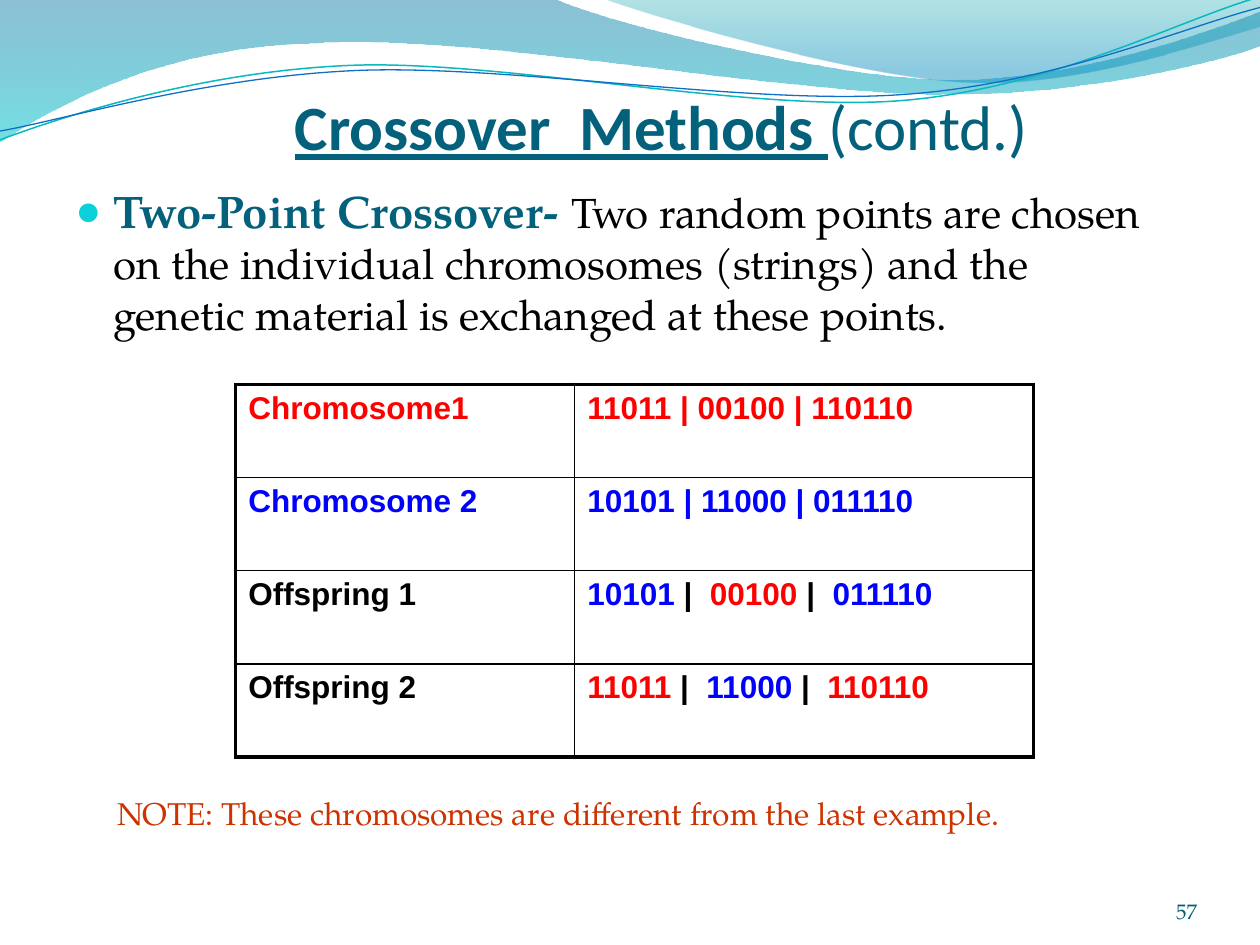
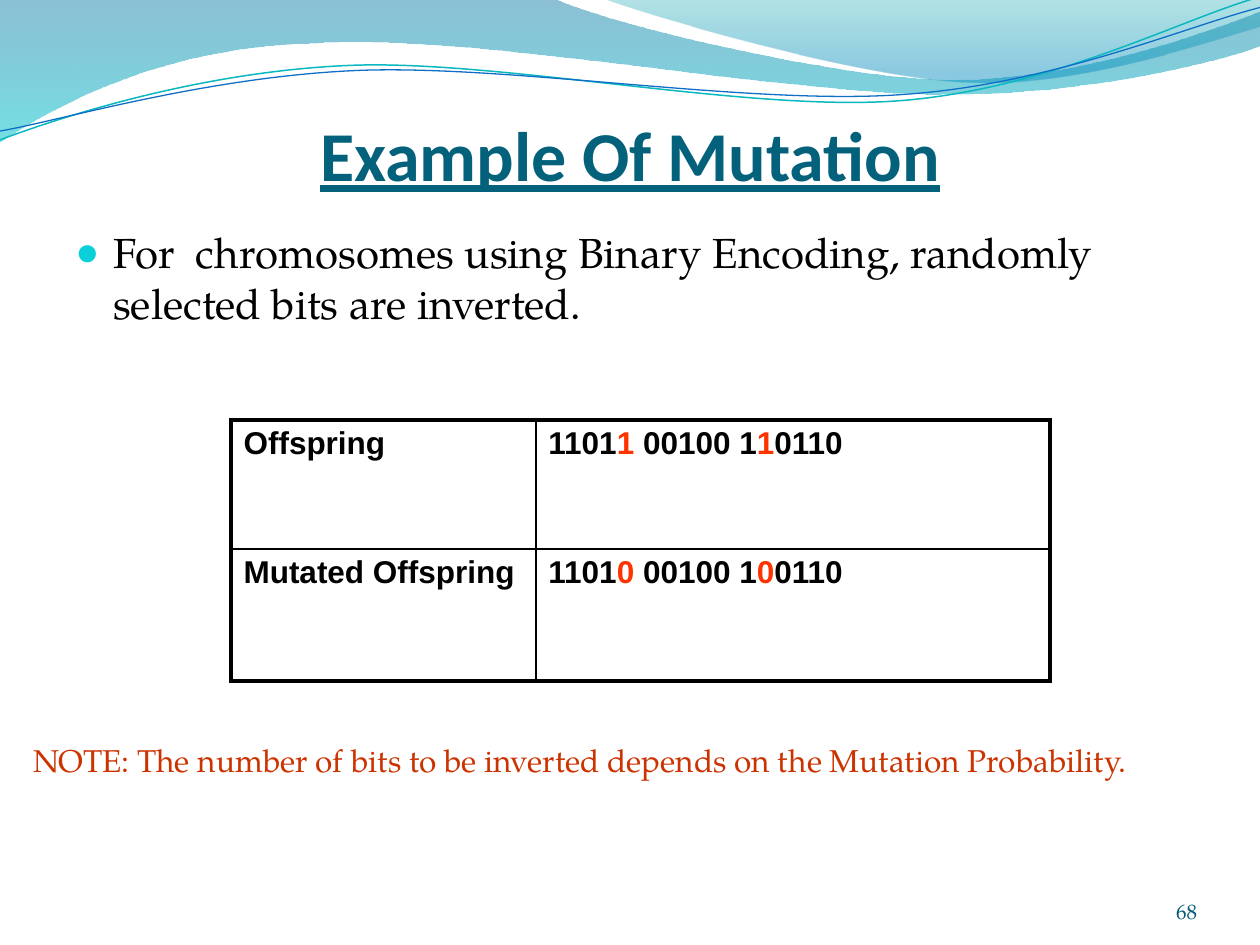
import math

import pptx
import pptx.dml.color
import pptx.enum.text
import pptx.oxml
import pptx.oxml.ns
import pptx.util

Pt = pptx.util.Pt
ALIGN = pptx.enum.text.PP_ALIGN
ANCHOR = pptx.enum.text.MSO_ANCHOR

COLORS = {
    "title": "04617B",
    "number": "045D75",
    "text": "000000",
    "bullet": "0BD0D9",
    "note": "CC3300",
    "red": "FF0000",
    "blue": "0000FF",
    "flipped": "FF3300",
    "teal_line": "0AB8BF",
    "blue_line": "0F6FC6",
    "band_top": "0074A1",
    "band_bottom": "00C6CF",
    "crest_top": "00A1A9",
    "crest_bottom": "008BBF",
}
SERIF, TITLE_FONT, TABLE_FONT = "TeX Gyre Pagella", "Calibri", "Arial"
WAVE_TILT = 357.3

BAND = [
    (0, 0), (316.8, -0.7),
    (342.7, 12.2, 478.1, 45.4, 545.8, 45.4),
    (614.2, 45.4, 689.8, 18.7, 720, 6.5),
    (720.7, 25.9),
    (707.8, 31.7, 626.4, 54.7, 537.1, 54),
    (447.8, 54, 275, 20.2, 185, 24.5),
    (92.9, 25.9, 33.1, 59.8, -0.7, 81.4),
    (0, 0),
]
CREST = [
    (344.9, -0.7),
    (366.5, 7.9, 491, 44.6, 553.7, 46.8),
    (616.3, 49.7, 691.9, 23, 720, 15.1),
    (720, 0), (344.9, -0.7),
]
TEAL_WAVE = [
    (0, 79.9),
    (34.6, 67, 113.8, 41, 199.4, 37.4),
    (284.4, 33.8, 427, 64.1, 513.4, 57.6),
    (599.8, 51.1, 675.4, 10.8, 718.6, -1.4),
]
BLUE_WAVE = [
    (0, 74.9),
    (33.8, 69.1, 118.1, 43.9, 203.8, 40.3),
    (290.2, 36.7, 429.8, 60.5, 516.2, 54),
    (601.9, 48.2, 677.5, 15.1, 720, 4.3),
]


def rgb(name):
    return pptx.dml.color.RGBColor.from_string(COLORS[name])


def new_xml(tag, **attributes):
    element = pptx.oxml.parse_xml(f"<a:{tag} {pptx.oxml.ns.nsdecls('a')}/>")
    for key, value in attributes.items():
        element.set(key, str(value))
    return element


def add_xml(parent, tag, **attributes):
    child = new_xml(tag, **attributes)
    parent.append(child)
    return child


def add_run(paragraph, text, font=SERIF, size=24, color="text", bold=False, underline=False):
    run = paragraph.add_run()
    run.text = text
    run.font.name = font
    run.font.size = Pt(size)
    run.font.color.rgb = rgb(color)
    run.font.bold = bold
    run.font.underline = underline


def turn(step, center, degrees):
    cos, sin = math.cos(math.radians(degrees)), math.sin(math.radians(degrees))
    offsets = [(x - center[0], y - center[1]) for x, y in zip(step[::2], step[1::2])]
    return sum(((center[0] + x * cos - y * sin, center[1] + x * sin + y * cos)
                for x, y in offsets), ())


class Deck:
    def __init__(self):
        self.presentation = pptx.Presentation()
        self.presentation.slide_width = Pt(720)
        self.presentation.slide_height = Pt(540)
        self.slide = None

    def start_slide(self, number):
        self.slide = self.presentation.slides.add_slide(self.presentation.slide_layouts[6])
        self.gradient_wave(BAND, (0, "band_top", 45), (100, "band_bottom", 55))
        self.gradient_wave(CREST, (0, "crest_top", 30), (80, "crest_bottom", 45))
        self.line_wave(TEAL_WAVE, (359.3, 41.4), "teal_line", 0.85)
        self.line_wave(BLUE_WAVE, (359.6, 42.5), "blue_line", 0.75)
        self.text((516, 492, 168, 36), [(number, {"size": 12, "color": "number"})],
                  align=ALIGN.RIGHT, anchor=ANCHOR.BOTTOM, insets=(0, 0, 0, 0))

    def outline(self, steps, close):
        points = [(Pt(x), Pt(y)) for step in steps for x, y in zip(step[::2], step[1::2])]
        builder = self.slide.shapes.build_freeform(*points[0])
        builder.add_line_segments(points[1:], close=close)
        wave = builder.convert_to_shape()
        wave.shadow.inherit = False
        segments = iter(list(wave.element.iter(pptx.oxml.ns.qn("a:lnTo"))))
        for step in steps[1:]:
            segment = next(segments)
            if len(step) == 6:
                curve = new_xml("cubicBezTo")
                segment.addprevious(curve)
                for part in (segment, next(segments), next(segments)):
                    curve.append(part[0])
                    part.getparent().remove(part)
        return wave

    def gradient_wave(self, steps, *stops):
        wave = self.outline(steps, close=True)
        wave.line.fill.background()
        wave.fill.gradient()
        wave.fill.gradient_angle = 270
        for stop, (position, color, _) in zip(wave.fill.gradient_stops, stops):
            stop.position = position / 100
            stop.color.rgb = rgb(color)
        tints = wave.element.spPr.iter(pptx.oxml.ns.qn("a:srgbClr"))
        for tint, (_, _, opacity) in zip(list(tints), stops):
            add_xml(tint, "alpha", val=opacity * 1000)

    def line_wave(self, steps, center, color, width):
        wave = self.outline([turn(step, center, -WAVE_TILT) for step in steps], close=False)
        wave.rotation = WAVE_TILT
        wave.fill.background()
        wave.line.color.rgb = rgb(color)
        wave.line.width = Pt(width)

    def text(self, box, runs, align=ALIGN.LEFT, anchor=ANCHOR.TOP,
             insets=(7.2, 3.6, 7.2, 3.6), space_before=0):
        frame = self.slide.shapes.add_textbox(*map(Pt, box)).text_frame
        frame.word_wrap = True
        frame.vertical_anchor = anchor
        (frame.margin_left, frame.margin_top,
         frame.margin_right, frame.margin_bottom) = map(Pt, insets)
        paragraph = frame.paragraphs[0]
        paragraph.alignment = align
        paragraph.space_before = Pt(space_before)
        for text, style in runs:
            add_run(paragraph, text, **style)
        return paragraph

    def title(self, box, size, heading, suffix=""):
        look = {"font": TITLE_FONT, "size": size, "color": "title"}
        runs = [(heading, {**look, "bold": True, "underline": True})]
        if suffix:
            runs.append((suffix, look))
        self.text(box, runs, align=ALIGN.CENTER, anchor=ANCHOR.BOTTOM, insets=(0, 3.6, 0, 0))

    def bullet(self, box, runs):
        properties = self.text(box, runs, space_before=4.8)._p.get_or_add_pPr()
        properties.set("marL", str(Pt(21.6)))
        properties.set("indent", str(-Pt(21.6)))
        add_xml(add_xml(properties, "buClr"), "srgbClr", val=COLORS["bullet"])
        add_xml(properties, "buSzPct", val=95000)
        add_xml(properties, "buFont", typeface=TABLE_FONT)
        add_xml(properties, "buChar", char="●")

    def note(self, box, text):
        self.text(box, [(text, {"size": 18, "color": "note"})], space_before=9)

    def table(self, left, top, widths, heights, rows):
        grid = self.slide.shapes.add_table(
            len(rows), len(widths), Pt(left), Pt(top),
            Pt(sum(widths)), Pt(sum(heights))).table
        grid.first_row = grid.horz_banding = False
        for column, width in zip(grid.columns, widths):
            column.width = Pt(width)
        for row, height in zip(grid.rows, heights):
            row.height = Pt(height)
        for r, row in enumerate(rows):
            for c, runs in enumerate(row):
                cell = grid.cell(r, c)
                self.borders(cell, L=c == 0, R=c == len(widths) - 1,
                             T=r == 0, B=r == len(rows) - 1)
                cell.fill.background()
                paragraph = cell.text_frame.paragraphs[0]
                paragraph.space_before = Pt(3.6)
                for text, color in runs:
                    add_run(paragraph, text, font=TABLE_FONT, size=18, color=color, bold=True)

    def borders(self, cell, **outer_sides):
        properties = cell._tc.get_or_add_tcPr()
        for side, outer in outer_sides.items():
            line = add_xml(properties, f"ln{side}", w=Pt(2.25 if outer else 1))
            add_xml(add_xml(line, "solidFill"), "srgbClr", val=COLORS["text"])


def crossover_slide(deck):
    deck.start_slide("57")
    deck.title((54, 3.2, 648, 90), 36, "Crossover  Methods ", "(contd.)")
    deck.bullet((36, 101.2, 630, 103), [
        ("Two-Point Crossover- ", {"size": 26, "color": "title", "bold": True}),
        ("Two random points are chosen on the individual chromosomes (strings) "
         "and the genetic material is exchanged at these points.", {}),
    ])
    deck.table(134.7, 219.6, (193.7, 262.1), (53.25,) * 4, [
        [[("Chromosome1", "red")], [("11011 | 00100 | 110110", "red")]],
        [[("Chromosome 2", "blue")], [("10101 | 11000 | 011110", "blue")]],
        [[("Offspring 1", "text")],
         [("10101 ", "blue"), ("| ", "text"), (" 00100 ", "red"),
          ("|", "text"), ("  011110", "blue")]],
        [[("Offspring 2", "text")],
         [("11011 ", "red"), ("|  ", "text"), ("11000 ", "blue"),
          ("|", "text"), ("  110110", "red")]],
    ])
    deck.note((60, 450.2, 582, 28.8),
              "NOTE: These chromosomes are different from the last example.")


def mutation_slide(deck):
    deck.start_slide("68")
    deck.title((36, 21.6, 648, 90), 40, "Example Of Mutation")
    deck.bullet((36, 126, 648, 356.4), [
        ("For  chromosomes using Binary Encoding, randomly selected bits are inverted.", {}),
    ])
    deck.table(132, 240, (174.2, 293.8), (73.6, 75.6), [
        [[(label, "text")],
         [("1101", "text"), (first_bit, "flipped"), (" 00100 1", "text"),
          (second_bit, "flipped"), ("0110", "text")]]
        for label, first_bit, second_bit in (("Offspring", "1", "1"),
                                             ("Mutated Offspring", "0", "0"))
    ])
    deck.note((12, 419.8, 690, 28.8),
              "NOTE: The number of bits to be inverted depends on the Mutation Probability.")


def main():
    deck = Deck()
    crossover_slide(deck)
    mutation_slide(deck)
    deck.presentation.save("out.pptx")


if __name__ == "__main__":
    main()
